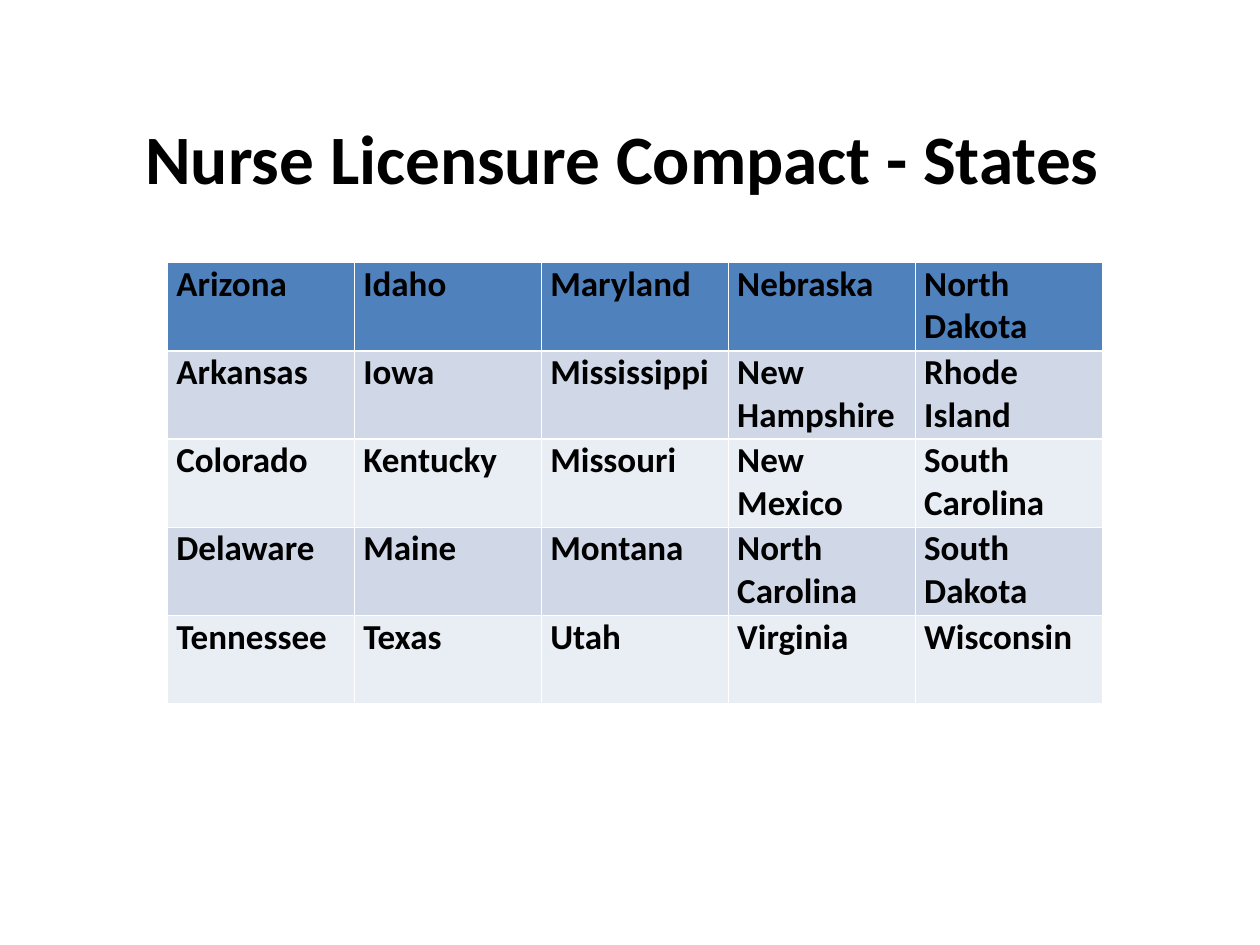
from pptx import Presentation
from pptx.dml.color import RGBColor as RGB
from pptx.enum.text import MSO_ANCHOR as ANCHOR, PP_ALIGN as ALIGN
from pptx.util import Inches, Pt

COLORS = {"text": "000000", "header": "4F81BD", "band": "D0D8E8", "plain": "E9EDF4"}
WIDTH, HEIGHT = Inches(10), Inches(7.5)
STATES = [
    ["Arizona", "Idaho", "Maryland", "Nebraska", "North Dakota"],
    ["Arkansas", "Iowa", "Mississippi", "New Hampshire", "Rhode Island"],
    ["Colorado", "Kentucky", "Missouri", "New Mexico", "South Carolina"],
    ["Delaware", "Maine", "Montana", "North Carolina", "South Dakota"],
    ["Tennessee", "Texas", "Utah", "Virginia", "Wisconsin"],
]


def share(x, y, w, h):
    """Turn shares of the slide's size into a box."""
    return int(x * WIDTH), int(y * HEIGHT), int(w * WIDTH), int(h * HEIGHT)


def write(tf, text, size=20, bold=True, color="text", align=ALIGN.LEFT):
    p = tf.paragraphs[0]
    p.alignment = align
    r = p.add_run()
    r.text = text
    r.font.name, r.font.size, r.font.bold = "Calibri", Pt(size), bold
    r.font.color.rgb = RGB.from_string(COLORS[color])


def add_title(s, box, text):
    tf = s.shapes.add_textbox(*box).text_frame
    tf.word_wrap = True
    tf.vertical_anchor = ANCHOR.BOTTOM
    tf.margin_left = tf.margin_top = tf.margin_bottom = 0
    tf.margin_right = Inches(0.12)
    write(tf, text, size=39.6, align=ALIGN.CENTER)


def add_states(s, box, rows):
    # The default table style supplies the white rules between cells
    table = s.shapes.add_table(len(rows), len(rows[0]), *box).table
    for i, row in enumerate(rows):
        fill = "header" if i == 0 else "band" if i % 2 else "plain"
        for j, state in enumerate(row):
            cell = table.cell(i, j)
            cell.fill.solid()
            cell.fill.fore_color.rgb = RGB.from_string(COLORS[fill])
            cell.margin_left = cell.margin_right = Inches(0.07)
            cell.margin_top = cell.margin_bottom = 0
            write(cell.text_frame, state)


def main():
    prs = Presentation()
    prs.slide_width, prs.slide_height = WIDTH, HEIGHT
    s = prs.slides.add_slide(prs.slide_layouts[6])
    # Heading above the five-by-five grid of states
    add_title(s, share(0.05, 0.04, 0.9, 0.17), "Nurse Licensure Compact - States")
    add_states(s, share(0.133, 0.278, 0.742, 0.467), STATES)
    prs.save("out.pptx")


if __name__ == "__main__":
    main()
